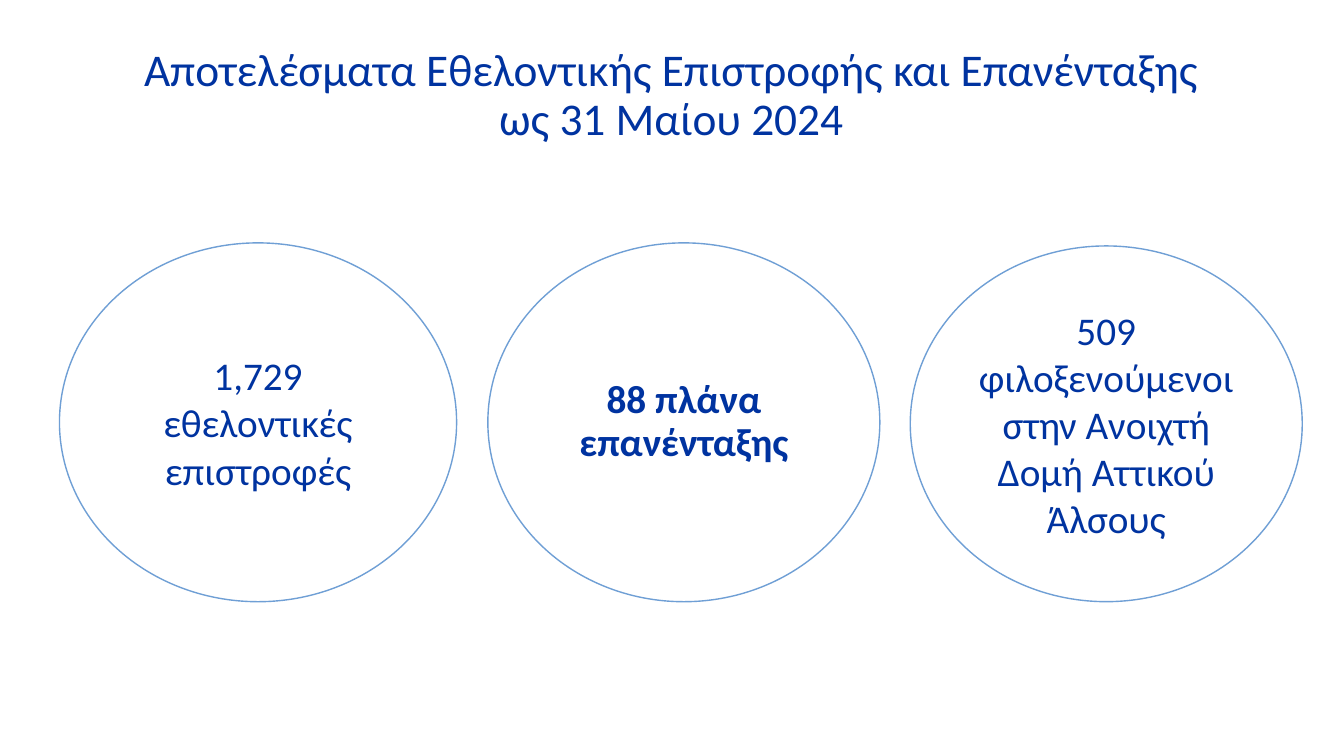
from pptx import Presentation
from pptx.dml.color import RGBColor
from pptx.enum.shapes import MSO_SHAPE
from pptx.enum.text import MSO_ANCHOR, MSO_AUTO_SIZE, PP_ALIGN
from pptx.util import Pt

NAVY = RGBColor(0x00, 0x33, 0xA0)
SKY = RGBColor(0x6F, 0x9F, 0xD5)
WHITE = RGBColor(0xFF, 0xFF, 0xFF)

CIRCLES_BOTTOM = 429.8
TITLE_LINES = (
    "Αποτελέσματα Εθελοντικής Επιστροφής και Επανένταξης",
    "ως 31 Μαίου 2024",
)
# text, left, top, width, bold, line spacing
RESULTS = (
    ("1,729 εθελοντικές επιστροφές", 42.5, 173.5, 283.7, False, 1.0),
    ("88 πλάνα επανένταξης", 348.5, 173.5, 280, True, 0.9),
    ("509 φιλοξενούμενοι στην Ανοιχτή Δομή Αττικού Άλσους",
     650.2, 175.7, 280, False, 1.0),
)


class ResultsSlide:
    font_name = "Calibri"
    title_size = 32.4
    result_size = 28

    def __init__(self, presentation):
        self.slide = presentation.slides.add_slide(presentation.slide_layouts[5])

    def add_text(self, frame, lines, size, bold, spacing, anchor):
        """Fill a text frame with one centred paragraph, broken into lines."""
        frame.word_wrap = True
        frame.auto_size = MSO_AUTO_SIZE.NONE
        frame.vertical_anchor = anchor
        paragraph = frame.paragraphs[0]
        paragraph.alignment = PP_ALIGN.CENTER
        paragraph.line_spacing = spacing
        paragraph.space_before = Pt(0)
        for number, line in enumerate(lines):
            if number:
                paragraph.add_line_break()
            run = paragraph.add_run()
            run.text = line
            run.font.name = self.font_name
            run.font.size = Pt(size)
            run.font.bold = bold
            run.font.color.rgb = NAVY

    def title(self, lines, left, top, width, height):
        heading = self.slide.shapes.title
        heading.left, heading.top = Pt(left), Pt(top)
        heading.width, heading.height = Pt(width), Pt(height)
        self.add_text(heading.text_frame, lines, self.title_size, False, 0.9,
                      MSO_ANCHOR.BOTTOM)

    def circle(self, text, left, top, width, bold, spacing):
        result = self.slide.shapes.add_shape(
            MSO_SHAPE.OVAL, Pt(left), Pt(top), Pt(width), Pt(CIRCLES_BOTTOM - top))
        result.shadow.inherit = False
        result.fill.solid()
        result.fill.fore_color.rgb = WHITE
        result.line.color.rgb = SKY
        result.line.width = Pt(1)
        self.add_text(result.text_frame, [text], self.result_size, bold, spacing,
                      MSO_ANCHOR.MIDDLE)


def main():
    presentation = Presentation()
    presentation.slide_width, presentation.slide_height = Pt(960), Pt(540)
    results_slide = ResultsSlide(presentation)
    results_slide.title(TITLE_LINES, 65.5, 23, 828, 84.2)
    for result in RESULTS:
        results_slide.circle(*result)
    presentation.save("out.pptx")


if __name__ == "__main__":
    main()
